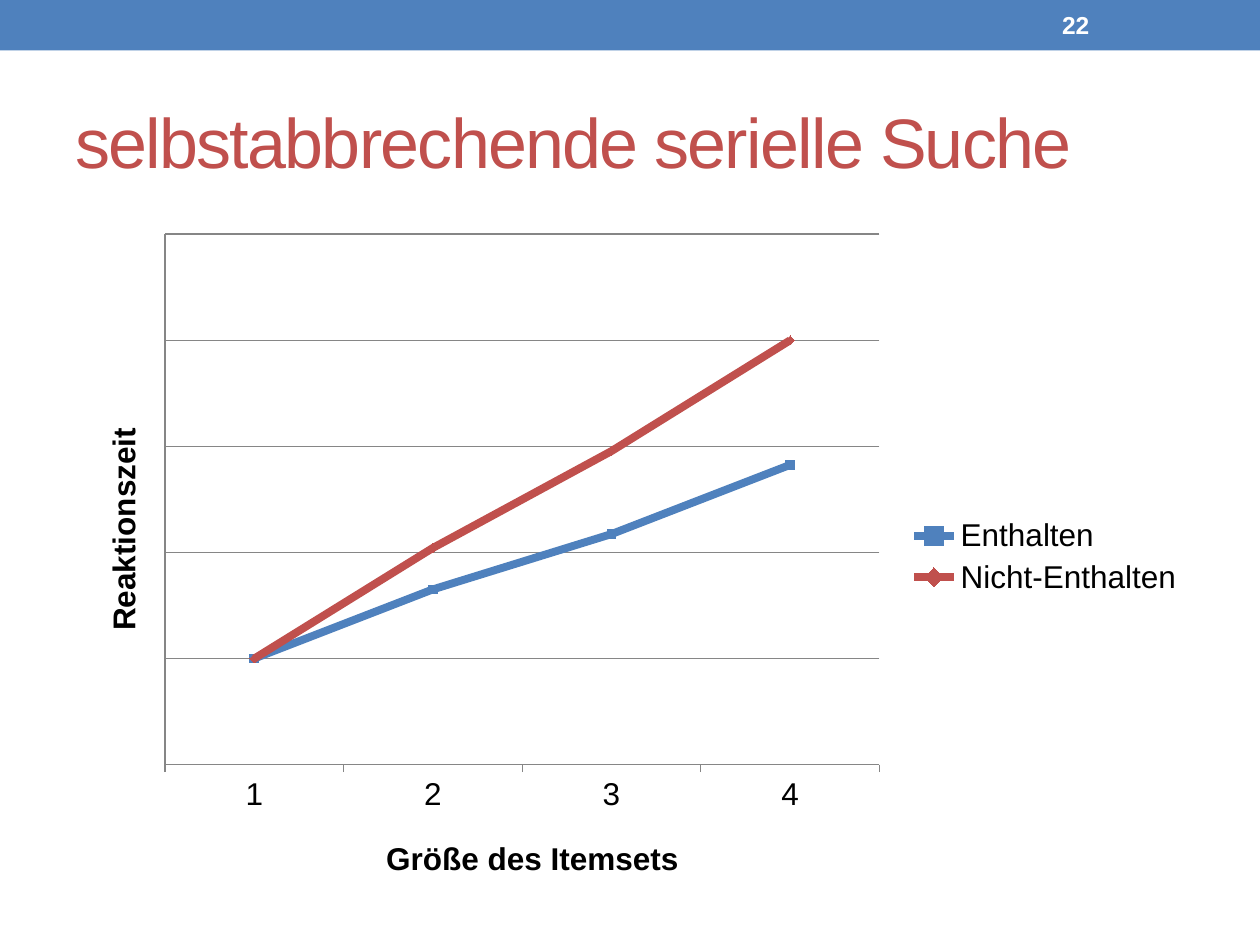
from dataclasses import dataclass

from lxml.etree import SubElement
from pptx import Presentation
from pptx.chart.data import CategoryChartData
from pptx.dml.color import RGBColor
from pptx.enum.chart import (XL_CHART_TYPE, XL_LEGEND_POSITION, XL_MARKER_STYLE,
                             XL_TICK_LABEL_POSITION, XL_TICK_MARK)
from pptx.enum.shapes import MSO_SHAPE
from pptx.enum.text import MSO_ANCHOR
from pptx.oxml.ns import qn
from pptx.util import Cm, Pt

BLUE, RED, BLACK, WHITE, GREY = "4F81BD", "C0504D", "000000", "FFFFFF", "868686"
FONT = "Arial"


@dataclass
class Label:
    text: str
    box: tuple[float, float, float, float]
    color: str
    size: float
    bold: bool = False
    spacing: int = 0


@dataclass
class Series:
    name: str
    values: tuple[int, ...]
    color: str
    marker: XL_MARKER_STYLE


LABELS = [
    Label("selbstabbrechende serielle Suche", (1.27, 1.47, 22.86, 2.74), RED, 40, spacing=-100),
    Label("22", (21.16, 0.05, 2.97, 0.91), WHITE, 14, bold=True),
]
SERIES = [
    Series("Enthalten", (77, 82, 86, 91), BLUE, XL_MARKER_STYLE.SQUARE),
    Series("Nicht-Enthalten", (77, 85, 92, 100), RED, XL_MARKER_STYLE.DIAMOND),
]
VALUE_AXIS = {"minimum_scale": 69.33, "maximum_scale": 107.68, "major_unit": 7.67,
              "has_major_gridlines": True, "major_tick_mark": XL_TICK_MARK.NONE,
              "tick_label_position": XL_TICK_LABEL_POSITION.NONE}
CATEGORY_AXIS = {"has_major_gridlines": False, "major_tick_mark": XL_TICK_MARK.OUTSIDE}


def rgb(color: str) -> RGBColor:
    return RGBColor.from_string(color)


def apply_format(target, values: dict) -> None:
    for name, value in values.items():
        setattr(target, name, value)


def format_font(font, color: str, size: float, bold: bool = False) -> None:
    apply_format(font, {"name": FONT, "size": Pt(size), "bold": bold})
    font.color.rgb = rgb(color)


def format_line(line, color: str, width: float) -> None:
    line.color.rgb = rgb(color)
    line.width = Pt(width)


def add_label(slide, label: Label) -> None:
    shape = slide.shapes.add_textbox(*map(Cm, label.box))
    apply_format(shape.text_frame, {"word_wrap": True, "vertical_anchor": MSO_ANCHOR.MIDDLE})
    run = shape.text_frame.paragraphs[0].add_run()
    run.text = label.text
    format_font(run.font, label.color, label.size, label.bold)
    if label.spacing:
        run.font._element.set("spc", str(label.spacing))


def place(element, position: dict, inner: bool = False) -> None:
    """Position a chart part by fractions of the chart area."""
    layout = element.find(qn("c:layout"))
    if layout is None:
        layout = SubElement(element, qn("c:layout"))
        text = element.find(qn("c:tx"))
        element.insert(0 if text is None else 1, layout)
    manual = SubElement(layout, qn("c:manualLayout"))
    settings = {"layoutTarget": "inner"} if inner else {}
    settings |= {"xMode": "edge", "yMode": "edge"} | position
    for name, value in settings.items():
        SubElement(manual, qn(f"c:{name}")).set("val", str(value))


def format_axis(axis, title: str, position: dict, values: dict) -> None:
    apply_format(axis, values)
    format_line(axis.format.line, GREY, 0.75)
    axis.has_title = True
    run = axis.axis_title.text_frame.paragraphs[0].add_run()
    run.text = title
    format_font(run.font, BLACK, 18, True)
    place(axis.axis_title._element, position)


def add_line_chart(slide) -> None:
    data = CategoryChartData()
    data.categories = ["1", "2", "3", "4"]
    for series in SERIES:
        data.add_series(series.name, series.values)
    chart = slide.shapes.add_chart(XL_CHART_TYPE.LINE_MARKERS, Cm(1.27), Cm(4.45),
                                   Cm(22.86), Cm(13.54), data).chart
    apply_format(chart, {"has_title": False, "has_legend": True})
    format_font(chart.font, BLACK, 18)
    apply_format(chart.legend, {"position": XL_LEGEND_POSITION.RIGHT, "include_in_layout": False})
    chart.plots[0].vary_by_categories = False

    # Axes and plot area
    format_axis(chart.category_axis, "Größe des Itemsets", {"x": 0.28, "y": 0.91}, CATEGORY_AXIS)
    format_axis(chart.value_axis, "Reaktionszeit", {"x": 0.03, "y": 0.3}, VALUE_AXIS)
    format_line(chart.value_axis.major_gridlines.format.line, GREY, 0.75)
    place(chart._chartSpace.chart.plotArea, {"x": 0.09, "y": 0.02, "w": 0.63, "h": 0.79}, True)

    # Series
    for line, series in zip(chart.plots[0].series, SERIES):
        line.smooth = False
        format_line(line.format.line, series.color, 4.5)
        apply_format(line.marker, {"style": series.marker, "size": 5})
        line.marker.format.fill.solid()
        line.marker.format.fill.fore_color.rgb = rgb(series.color)
        format_line(line.marker.format.line, series.color, 0.75)


def main() -> None:
    presentation = Presentation()
    apply_format(presentation, {"slide_width": Cm(25.4), "slide_height": Cm(19.05)})
    slide = presentation.slides.add_slide(presentation.slide_layouts[6])

    # Header bar
    bar = slide.shapes.add_shape(MSO_SHAPE.RECTANGLE, 0, 0, presentation.slide_width, Cm(1.02))
    bar.shadow.inherit = False
    bar.fill.solid()
    bar.fill.fore_color.rgb = rgb(BLUE)
    bar.line.fill.background()

    # Title, page number and chart
    for label in LABELS:
        add_label(slide, label)
    add_line_chart(slide)
    presentation.save("out.pptx")


if __name__ == "__main__":
    main()
